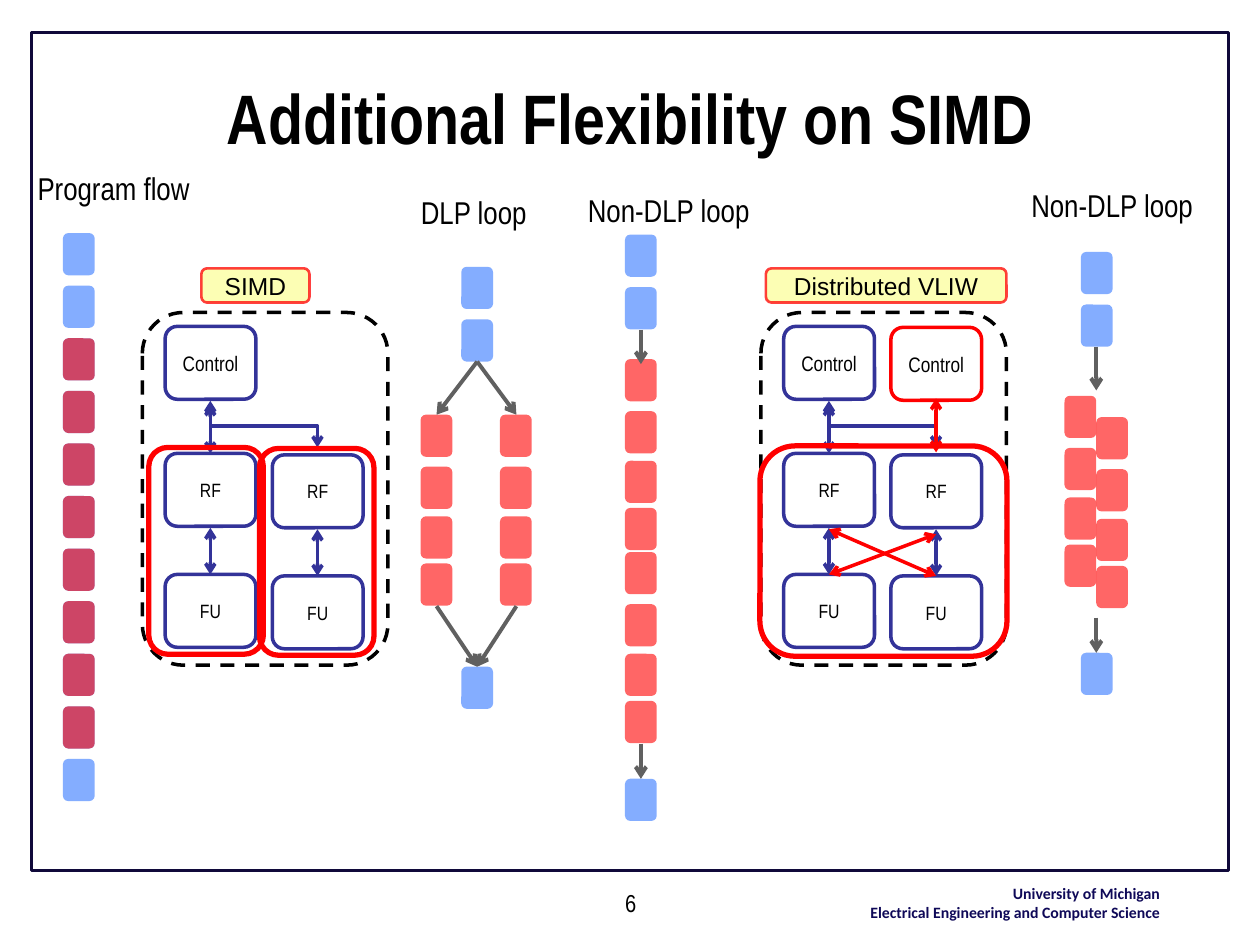
"""Builds a slide on how distributed VLIW adds flexibility to SIMD lanes."""
from lxml.etree import SubElement
from pptx import Presentation
from pptx.dml.color import RGBColor
from pptx.enum.dml import MSO_LINE
from pptx.enum.shapes import MSO_CONNECTOR, MSO_SHAPE
from pptx.enum.text import MSO_ANCHOR, PP_ALIGN
from pptx.oxml.ns import qn
from pptx.util import Cm, Pt

HUES = {"ink": "000000", "white": "FFFFFF", "frame": "10093A", "foot": "0F0958",
        "blue": "6699FF", "red": "FF0000", "navy": "333399", "gray": "606060",
        "cream": "FCFEB4"}
WIDE, TALL, STEP = 0.64, 0.85, 1.06
ROWS = (0, 1.05, 2.05, 3)
MID, PITCH = 1.37, 2.16


def paint(tone, hue, alpha=100):
    """Set a colour, with an opacity in percent."""
    tone.rgb = RGBColor.from_string(HUES[hue])
    if alpha < 100:
        fill = tone._xFill.find(qn("a:srgbClr"))
        SubElement(fill, qn("a:alpha")).set("val", str(alpha * 1000))


def write(frame, text, size, face="Arial Narrow", hue="ink", bold=False,
          align=PP_ALIGN.CENTER):
    """Fill a text frame with one paragraph for each line."""
    frame.word_wrap = True
    frame.text = text
    for para in frame.paragraphs:
        para.alignment = align
        para.font.name, para.font.size, para.font.bold = face, Pt(size), bold
        paint(para.font.color, hue)


def label(on, text, area, size, **look):
    """Add a text box."""
    box = on.add_textbox(*map(Cm, area))
    write(box.text_frame, text, size, **look)
    return box


def head(on, text, mid, top):
    """Add a column heading centred on mid."""
    label(on, text, (mid - 2, top, 4, 1.02), 18)


def box(on, area, fill=None, line=None, width=2, alpha=100, edge=100,
        kind=MSO_SHAPE.ROUNDED_RECTANGLE):
    """Add a plain shape."""
    item = on.add_shape(kind, *map(Cm, area))
    item.shadow.inherit = False
    if fill:
        item.fill.solid()
        paint(item.fill.fore_color, fill, alpha)
    else:
        item.fill.background()
    if line:
        item.line.width = Pt(width)
        item.line.fill.solid()
        paint(item.line.color, line, edge)
    else:
        item.line.fill.background()
    return item


def named(on, area, text, size, face="Arial Narrow", **look):
    """Add a shape with centred text and no insets."""
    item = box(on, area, **look)
    frame = item.text_frame
    frame.margin_left = frame.margin_right = 0
    frame.margin_top = frame.margin_bottom = 0
    frame.vertical_anchor = MSO_ANCHOR.MIDDLE
    write(frame, text, size, face)


def arrow(on, start, end, hue="gray", width=2.25, both=False,
          kind=MSO_CONNECTOR.STRAIGHT):
    """Add a connector with one or two open heads."""
    line = on.add_connector(kind, *map(Cm, (*start, *end)))
    line.line.width = Pt(width)
    paint(line.line.color, hue)
    rim = line.line._get_or_add_ln()
    for tip in ("a:headEnd", "a:tailEnd") if both else ("a:tailEnd",):
        SubElement(rim, qn(tip)).set("type", "arrow")
    SubElement(line._element.spPr, qn("a:effectLst"))
    return line


def link(on, start, end, hue="navy"):
    """Add a two-way link between units."""
    arrow(on, start, end, hue, 2, True)


def bend(on, start, end):
    """Add a two-way elbow that leaves downward."""
    (left, top), (right, low) = start, end
    x, y = (left + right) / 2, (top + low) / 2
    w, h = (low - top) / 2, (right - left) / 2
    line = arrow(on, (x + w, y - h), (x - w, y + h), "navy", 2, True,
                 MSO_CONNECTOR.ELBOW)
    line._element.spPr.find(qn("a:xfrm")).set("rot", "16200000")


def block(on, x, y, hue="blue"):
    """Add one program block."""
    alpha = 80 if hue == "blue" else 60
    box(on, (x, y, WIDE, TALL), hue, alpha=alpha)


def lane(on, x, y):
    """Add four loop blocks in a column."""
    for row in ROWS:
        block(on, x, y + row, "red")


def flow(on, x, top, foot, lanes):
    """Add two blocks, the loop lanes and a last block."""
    for y in (top, top + STEP, foot):
        block(on, x, y)
    for spot in lanes:
        lane(on, *spot)


def unit(on, x, y, text, hue="navy"):
    """Add a control, register file or function unit."""
    size = 12 if text == "Control" else 11
    named(on, (x, y, 1.83, 1.47), text, size, fill="white", line=hue)


def core(on, x, tag, left, width):
    """Add a machine with one control and two lanes."""
    rim = box(on, (x, 6.3, 4.95, 7.11), "white", "ink")
    rim.line.dash_style = MSO_LINE.DASH
    named(on, (left, 5.41, width, 0.69), tag, 14, "Arial", fill="cream",
          line="red", width=1.5, edge=74)
    unit(on, x + 0.46, 6.58, "Control")
    link(on, (x + MID, 8.08), (x + MID, 9.14))
    bend(on, (x + MID, 8.15), (x + MID + PITCH, 9.02))
    for col in range(2):
        move, drop = x + col * PITCH, col * 0.03
        unit(on, move + 0.46, 9.14 + drop, "RF")
        unit(on, move + 0.46, 11.58 + drop, "FU")
        link(on, (move + MID, 10.64 + drop), (move + MID, 11.58 + drop))


def extra(on, x):
    """Add the second control and the crossed links."""
    near, far = x + MID, x + MID + PITCH
    unit(on, x + 0.46 + PITCH, 6.6, "Control", "red")
    link(on, (far, 8.03), (far, 9.12), "red")
    link(on, (near, 10.67), (far, 11.61), "red")
    link(on, (far, 10.77), (near, 11.58), "red")


def main():
    """Build and save the slide."""
    deck = Presentation()
    deck.slide_width, deck.slide_height = Cm(25.4), Cm(19.05)
    on = deck.slides.add_slide(deck.slide_layouts[6]).shapes

    box(on, (0.64, 0.66, 24.13, 16.89), line="frame", width=1.5,
        kind=MSO_SHAPE.RECTANGLE)
    label(on, "University of Michigan\nElectrical Engineering and Computer Science",
          (15.88, 17.7, 7.75, 1.02), 9, face="Calibri", hue="foot", bold=True,
          align=PP_ALIGN.RIGHT)
    title = label(on, "Additional Flexibility on SIMD",
                  (1.27, 0.76, 22.86, 3.18), 40, bold=True)
    title.text_frame.vertical_anchor = MSO_ANCHOR.MIDDLE
    label(on, "6", (8.69, 17.78, 8.05, 0.84), 14)

    for row in range(11):
        block(on, 1.27, 4.7 + row * STEP)
    for row in range(2, 10):
        block(on, 1.27, 4.7 + row * STEP, "red")

    core(on.add_group_shape().shapes, 2.87, "SIMD", 4.06, 2.18)
    wide = on.add_group_shape().shapes
    core(wide, 15.34, "Distributed VLIW", 15.44, 4.85)
    extra(wide, 15.34)

    split = on.add_group_shape().shapes
    flow(split, 9.3, 5.38, 13.44, [(8.48, 8.36), (10.08, 8.36)])
    for x in (8.8, 10.41):
        arrow(split, (9.62, 7.29), (x, 8.36))
        arrow(split, (x, 12.22), (9.62, 13.44))
    head(split, "DLP loop", 9.55, 3.76)

    chain = on.add_group_shape().shapes
    flow(chain, 12.6, 4.73, 15.7, [(12.6, 7.24), (12.6, 11.13)])
    arrow(chain, (12.92, 6.65), (12.92, 7.34))
    arrow(chain, (12.92, 14.99), (12.92, 15.7))
    head(chain, "Non-DLP loop", 13.48, 3.73)

    for area in ((3, 9.02, 2.31, 4.17), (5.23, 9.04, 2.31, 4.17),
                 (15.32, 8.99, 4.98, 4.24)):
        box(on, area, line="red", width=3)
    head(on, "Program flow", 2.29, 3.28)

    pair = on.add_group_shape().shapes
    flow(pair, 21.79, 5.08, 13.16, [(21.46, 7.98), (22.1, 8.41)])
    arrow(pair, (22.1, 6.99), (22.1, 7.87))
    arrow(pair, (22.1, 12.45), (22.1, 13.16))
    head(pair, "Non-DLP loop", 22.42, 3.63)

    deck.save("out.pptx")


if __name__ == "__main__":
    main()
